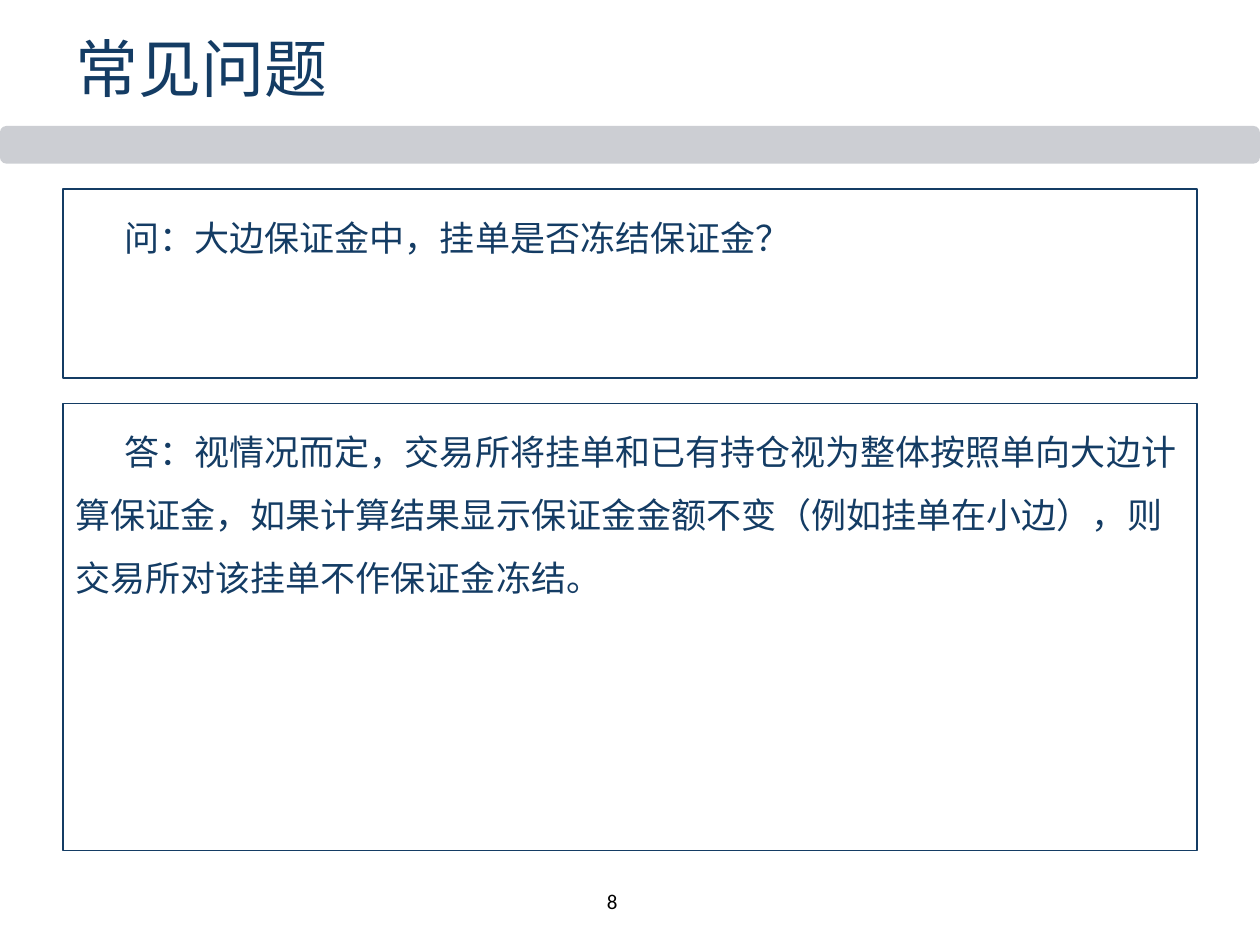
from dataclasses import dataclass

from lxml.etree import SubElement
from pptx import Presentation
from pptx.dml.color import RGBColor
from pptx.enum.shapes import MSO_SHAPE
from pptx.enum.text import MSO_ANCHOR, PP_ALIGN
from pptx.oxml.ns import qn
from pptx.util import Cm, Pt


@dataclass(frozen=True)
class Theme:
    navy: RGBColor = RGBColor(0x14, 0x3C, 0x64)
    grey: RGBColor = RGBColor(0xCC, 0xCE, 0xD3)
    black: RGBColor = RGBColor(0, 0, 0)
    cjk: str = "Noto Sans CJK SC"
    latin: str = "Calibri"
    title: int = 36
    body: int = 20
    number: int = 12


@dataclass(frozen=True)
class Panel:
    top: float
    height: float
    text: str


THEME = Theme()
LEFT, WIDTH = 1.27, 22.86
PANELS = [
    Panel(3.81, 3.81, "问：大边保证金中，挂单是否冻结保证金？"),
    Panel(8.13, 9.02, "答：视情况而定，交易所将挂单和已有持仓视为整体按照单向大边计算保证金，"
                      "如果计算结果显示保证金金额不变（例如挂单在小边），则交易所对该挂单不作保证金冻结。"),
]


def write(sp, text: str, size: int, font: str, color: RGBColor, anchor=MSO_ANCHOR.MIDDLE,
          align=PP_ALIGN.LEFT):
    """Put one styled paragraph in a shape and return it."""
    tf = sp.text_frame
    tf.word_wrap = True
    tf.vertical_anchor = anchor
    p = tf.paragraphs[0]
    p.text = text
    p.alignment = align
    p.font.size = Pt(size)
    p.font.color.rgb = color
    p.font.name = font
    SubElement(p._p.pPr.find(qn("a:defRPr")), qn("a:ea")).set("typeface", font)
    return p


def add_band(s) -> None:
    sp = s.shapes.add_shape(MSO_SHAPE.ROUNDED_RECTANGLE, 0, Cm(2.54), Cm(25.4), Cm(0.76))
    sp.adjustments[0] = 0.17
    sp.shadow.inherit = False
    sp.fill.solid()
    sp.fill.fore_color.rgb = THEME.grey
    sp.line.fill.background()


def add_panel(s, panel: Panel) -> None:
    sp = s.shapes.add_shape(MSO_SHAPE.RECTANGLE, Cm(LEFT), Cm(panel.top), Cm(WIDTH),
                            Cm(panel.height))
    sp.shadow.inherit = False
    sp.fill.background()
    sp.line.color.rgb = THEME.navy
    sp.line.width = Pt(0.75)
    p = write(sp, panel.text, THEME.body, THEME.cjk, THEME.navy, MSO_ANCHOR.TOP)
    p.line_spacing = 1.5
    p._p.pPr.set("indent", str(Cm(0.99)))


def main() -> None:
    prs = Presentation()
    prs.slide_width, prs.slide_height = Cm(25.4), Cm(19.05)
    s = prs.slides.add_slide(prs.slide_layouts[6])
    add_band(s)
    title = s.shapes.add_textbox(Cm(LEFT), Cm(0.36), Cm(WIDTH), Cm(1.98))
    write(title, "常见问题", THEME.title, THEME.cjk, THEME.navy)
    for panel in PANELS:
        add_panel(s, panel)
    number = s.shapes.add_textbox(Cm(10.59), Cm(17.65), Cm(2.11), Cm(1.02))
    write(number, "8", THEME.number, THEME.latin, THEME.black, align=PP_ALIGN.RIGHT)
    prs.save("out.pptx")


if __name__ == "__main__":
    main()
